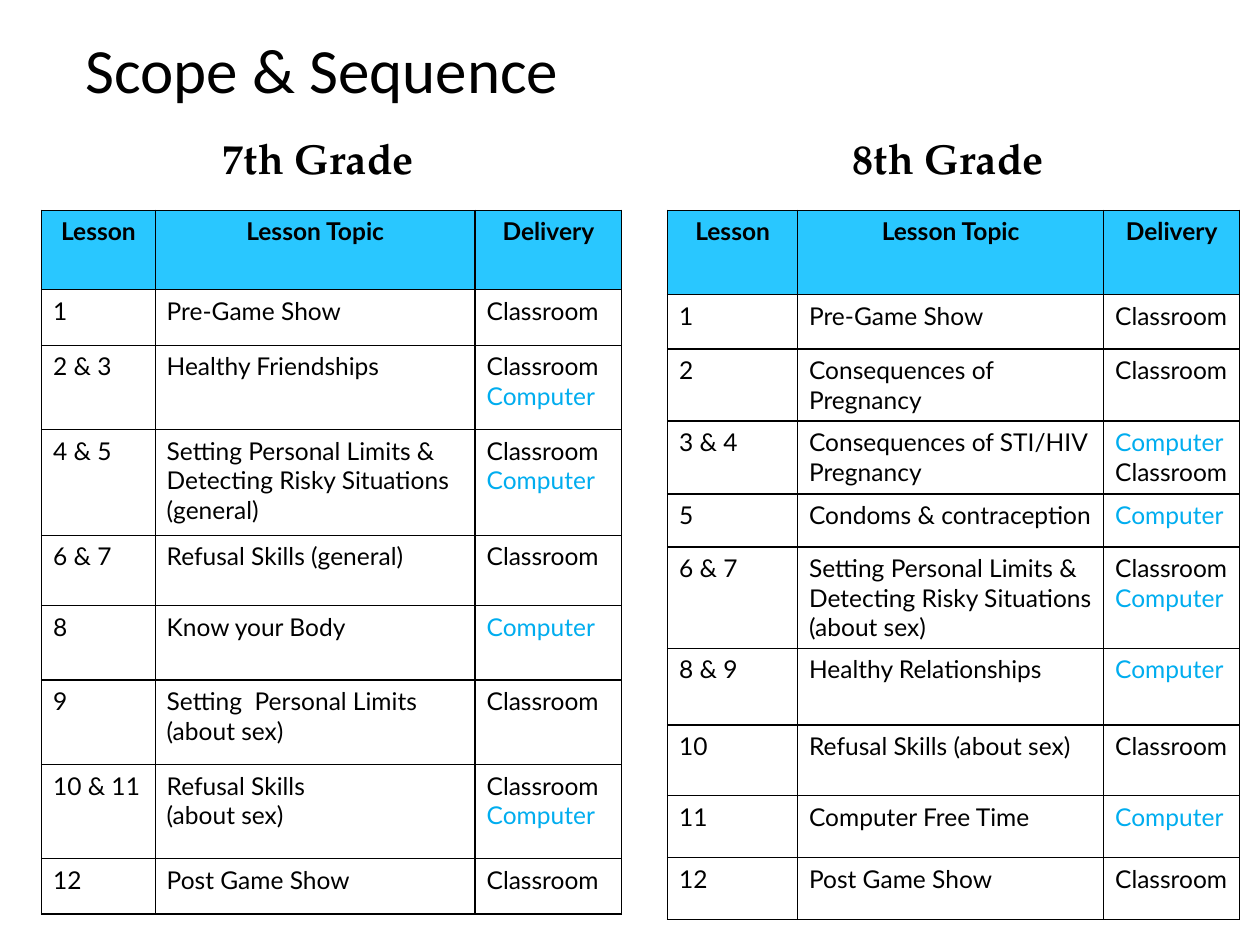
"""Build a slide with the lesson plans of two grades side by side."""
import pptx
import pptx.dml.color
import pptx.enum.text
import pptx.oxml
import pptx.oxml.ns
import pptx.util

Cm = pptx.util.Cm
Align = pptx.enum.text.PP_ALIGN
Anchor = pptx.enum.text.MSO_ANCHOR
BLACK = pptx.dml.color.RGBColor(0x00, 0x00, 0x00)
SKY = pptx.dml.color.RGBColor(0x29, 0xC7, 0xFF)
BLUE = pptx.dml.color.RGBColor(0x00, 0xAD, 0xEF)


def write(frame, text, font="Lato", size=14, bold=False, align=Align.LEFT, space=None):
    for num, line in enumerate(text.split("\n")):
        para = frame.add_paragraph() if num else frame.paragraphs[0]
        para.alignment = align
        para.line_spacing = space
        run = para.add_run()
        run.text = line
        run.font.name = font
        run.font.size = pptx.util.Pt(size)
        run.font.bold = bold
        run.font.color.rgb = BLUE if line == "Computer" else BLACK


def edge(cell):
    props = cell._tc.get_or_add_tcPr()
    for side in ("lnL", "lnR", "lnT", "lnB"):
        props.append(pptx.oxml.parse_xml(
            f'<a:{side} {pptx.oxml.ns.nsdecls("a")} w="12700"><a:solidFill>'
            f'<a:srgbClr val="{BLACK}"/></a:solidFill></a:{side}>'))


HEAD = ("Lesson", "Lesson Topic", "Delivery")
BOTH = "Classroom\nComputer"

grades = [
    {
        "name": "7th Grade", "label": (4.24, 4.42), "left": 0.84,
        "cols": (2.29, 6.45, 2.95),
        "rows": [
            (1.6, HEAD),
            (1.12, ("1", "Pre-Game Show", "Classroom")),
            (1.7, ("2 & 3", "Healthy Friendships", BOTH)),
            (2.13, ("4 & 5", "Setting Personal Limits & Detecting Risky Situations (general)", BOTH)),
            (1.42, ("6 & 7", "Refusal Skills (general)", "Classroom")),
            (1.5, ("8", "Know your Body", "Computer")),
            (1.7, ("9", "Setting  Personal Limits (about sex)", "Classroom")),
            (1.9, ("10 & 11", "Refusal Skills\n(about sex)", BOTH)),
            (1.12, ("12", "Post Game Show", "Classroom")),
        ],
    },
    {
        "name": "8th Grade", "label": (16.94, 4.47), "left": 13.46,
        "cols": (2.62, 6.17, 2.74),
        "rows": [
            (1.7, HEAD),
            (1.1, ("1", "Pre-Game Show", "Classroom")),
            (1.45, ("2", "Consequences of Pregnancy", "Classroom")),
            (1.47, ("3 & 4", "Consequences of STI/HIV Pregnancy", "Computer\nClassroom")),
            (1.07, ("5", "Condoms & contraception", "Computer")),
            (2.03, ("6 & 7", "Setting Personal Limits & Detecting Risky Situations (about sex)", BOTH)),
            (1.55, ("8 & 9", "Healthy Relationships", "Computer")),
            (1.42, ("10", "Refusal Skills (about sex)", "Classroom")),
            (1.25, ("11", "Computer Free Time", "Computer")),
            (1.25, ("12", "Post Game Show", "Classroom")),
        ],
    },
]

deck = pptx.Presentation()
deck.slide_width, deck.slide_height = Cm(25.4), Cm(19.05)
slide = deck.slides.add_slide(deck.slide_layouts[5])

title = slide.shapes.title
title.left, title.top, title.width, title.height = Cm(1.47), Cm(0.2), Cm(16.66), Cm(2.54)
title.text_frame.vertical_anchor = Anchor.MIDDLE
write(title.text_frame, "Scope & Sequence", font="Calibri", size=36, space=0.9)

for grade in grades:
    rows, cols = grade["rows"], grade["cols"]
    high = sum(size for size, _ in rows)
    grid = slide.shapes.add_table(len(rows), len(cols), Cm(grade["left"]), Cm(4.24),
                                  Cm(sum(cols)), Cm(high)).table
    grid.first_row = grid.horz_banding = False
    for col, wide in zip(grid.columns, cols):
        col.width = Cm(wide)
    for row, (size, texts) in zip(grid.rows, rows):
        row.height = Cm(size)
        top = texts is HEAD
        for cell, text in zip(row.cells, texts):
            cell.margin_left = cell.margin_right = Cm(0.23)
            cell.margin_top = cell.margin_bottom = Cm(0.13)
            edge(cell)
            if top:
                cell.fill.solid()
                cell.fill.fore_color.rgb = SKY
            else:
                cell.fill.background()
            write(cell.text_frame, text, bold=top, align=Align.CENTER if top else Align.LEFT)

    left, wide = grade["label"]
    label = slide.shapes.add_textbox(Cm(left), Cm(2.54), Cm(wide), Cm(1.3)).text_frame
    label.word_wrap = False
    label.auto_size = pptx.enum.text.MSO_AUTO_SIZE.SHAPE_TO_FIT_TEXT
    write(label, grade["name"], font="TeX Gyre Pagella", size=24, bold=True)

deck.save("out.pptx")
